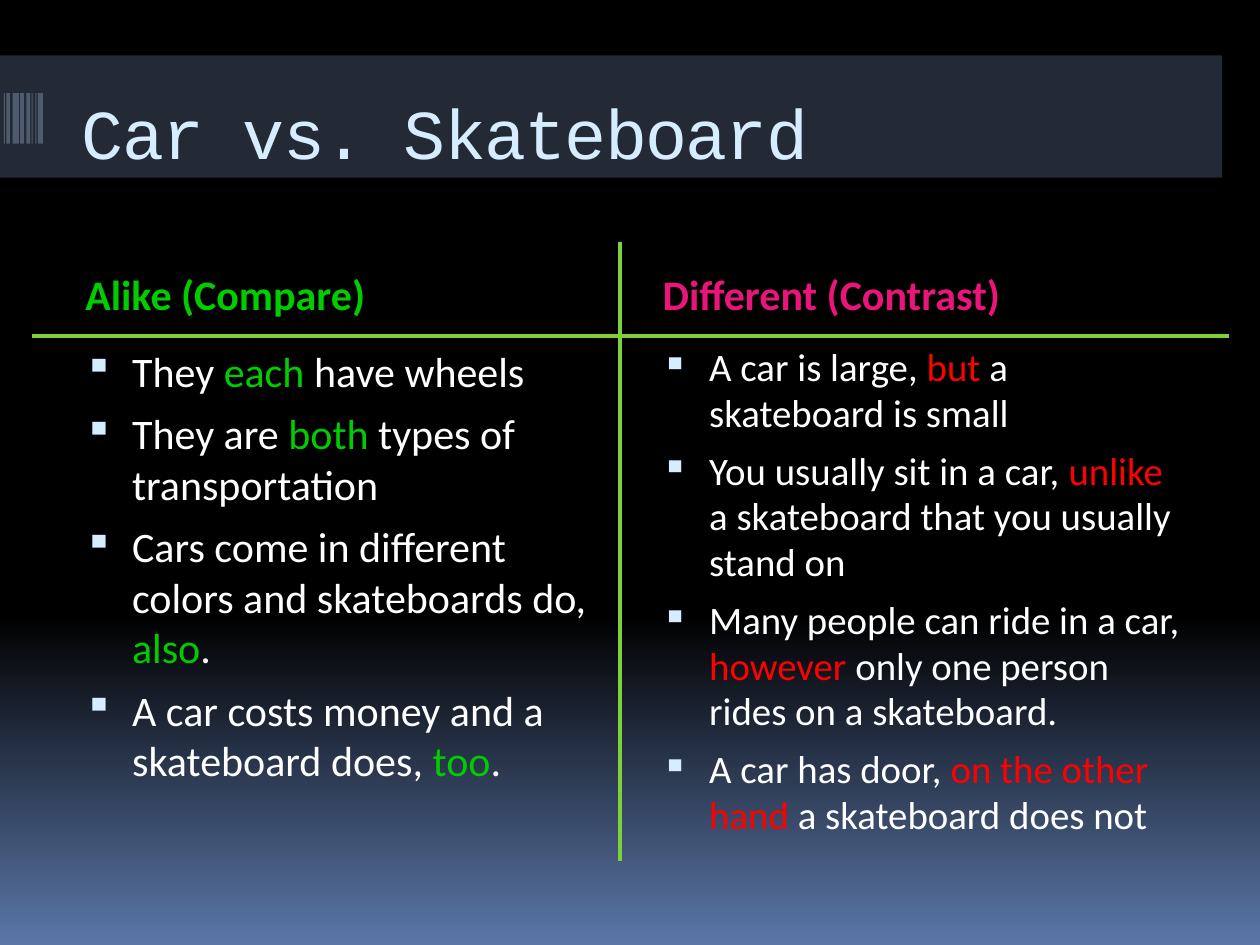
import pptx
import pptx.dml.color
import pptx.enum.dml
import pptx.enum.shapes
import pptx.enum.text
import pptx.oxml.ns
import pptx.util
from lxml import etree
from pptx.dml.color import RGBColor
from pptx.util import Inches, Pt

BLACK = RGBColor(0x00, 0x00, 0x00)
WHITE = RGBColor(0xFF, 0xFF, 0xFF)
SKY = RGBColor(0x5B, 0x77, 0xA8)
BAND = RGBColor(0x58, 0x6A, 0x86)
BAR = RGBColor(0x4E, 0x5B, 0x6F)
ICE = RGBColor(0xD6, 0xEC, 0xFF)
GREEN = RGBColor(0x00, 0xCC, 0x00)
PINK = RGBColor(0xEA, 0x15, 0x7A)
RED = RGBColor(0xFF, 0x00, 0x00)
LIME = RGBColor(0x7F, 0xD1, 0x3B)

BARS = [(0.03, 0.01), (0.05, 0.03), (0.1, 0.05), (0.16, 0.03),
        (0.21, 0.03), (0.25, 0.01), (0.28, 0.01), (0.3, 0.04)]
ALIKE = [
    ("They ", "each ", "have wheels"),
    ("They are ", "both", " types of transportation"),
    ("Cars come in different colors and skateboards do, ", "also", "."),
    ("A car costs money and a skateboard does, ", "too", "."),
]
DIFFERENT = [
    ("A car is large, ", "but", " a skateboard is small"),
    ("You usually sit in a car, ", "unlike", " a skateboard that you usually stand on"),
    ("Many people can ride in a car, ", "however", " only one person rides on a skateboard."),
    ("A car has door,", " on the other hand ", "a skateboard does not"),
]
COLUMNS = [
    (0.5, "Alike (Compare)", GREEN, ALIKE, GREEN, 24, 1.0),
    (5.08, "Different (Contrast)", PINK, DIFFERENT, RED, 22.2, 0.98),
]


def sub(parent, tag, **attrs):
    """Append a DrawingML child element with the given attributes."""
    return etree.SubElement(parent, pptx.oxml.ns.qn(tag), **attrs)


def set_background(s):
    """Fill the slide with a gradient from black down to blue."""
    fill = s.background.fill
    fill.gradient()
    fill.gradient_angle = 270
    for stop, position, color in zip(fill.gradient_stops, (0.65, 1), (BLACK, SKY)):
        stop.position = position
        stop.color.rgb = color


def add_rect(s, x, y, w, h, color, alpha=None):
    """Add a plain rectangle, optionally with an opacity in percent."""
    sp = s.shapes.add_shape(pptx.enum.shapes.MSO_SHAPE.RECTANGLE,
                            Inches(x), Inches(y), Inches(w), Inches(h))
    sp.shadow.inherit = False
    sp.fill.solid()
    sp.fill.fore_color.rgb = color
    sp.line.fill.background()
    if alpha is not None:
        clr = sp.element.spPr.find(".//" + pptx.oxml.ns.qn("a:srgbClr"))
        sub(clr, "a:alpha", val=str(alpha * 1000))


def add_rule(s, x1, y1, x2, y2):
    """Add a straight dividing line."""
    c = s.shapes.add_connector(pptx.enum.shapes.MSO_CONNECTOR.STRAIGHT,
                               Inches(x1), Inches(y1), Inches(x2), Inches(y2))
    c.line.color.rgb = LIME
    c.line.width = Pt(2.25)
    sub(c.element.spPr, "a:effectLst")


def style_run(r, font, size, color, bold=False):
    """Set the font of a run."""
    r.font.name = font
    r.font.size = Pt(size)
    r.font.color.rgb = color
    r.font.bold = bold


def set_title(s, text):
    """Place and format the title in front of its band."""
    title = s.shapes.title
    title.left, title.top = Inches(0.55), Inches(0.56)
    title.width, title.height = Inches(8.5), Inches(1)
    tf = title.text_frame
    tf.text = text
    tf.margin_top = Inches(0.15)
    tf.vertical_anchor = pptx.enum.text.MSO_ANCHOR.TOP
    p = tf.paragraphs[0]
    p.alignment = pptx.enum.text.PP_ALIGN.LEFT
    r = p.runs[0]
    style_run(r, "Courier New", 40, ICE)
    r.font._element.set("spc", "-100")
    title.element.getparent().append(title.element)


def add_text(s, x, y, h):
    """Add a wrapping column text box and return its text frame."""
    tf = s.shapes.add_textbox(Inches(x), Inches(y), Inches(4.42), Inches(h)).text_frame
    tf.word_wrap = True
    return tf


def add_heading(s, x, text, color):
    """Add a bold column heading."""
    tf = add_text(s, x, 1.98, 0.7)
    tf.vertical_anchor = pptx.enum.text.MSO_ANCHOR.MIDDLE
    tf.text = text
    p = tf.paragraphs[0]
    p._p.get_or_add_pPr().set("marL", str(Inches(0.08)))
    style_run(p.runs[0], "Calibri", 24, color, True)


def set_bullet(p):
    """Give a paragraph a hanging square bullet."""
    pPr = p._p.get_or_add_pPr()
    pPr.set("marL", str(Inches(0.45)))
    pPr.set("indent", str(Inches(-0.38)))
    sub(sub(pPr, "a:buClr"), "a:srgbClr", val=str(ICE))
    sub(pPr, "a:buSzPct", val="95000")
    sub(pPr, "a:buChar", char="▪")


def add_bullets(s, x, items, accent, size, spacing):
    """Add a bullet list whose middle runs carry the accent colour."""
    tf = add_text(s, x, 2.69, 4.33)
    for i, parts in enumerate(items):
        p = tf.add_paragraph() if i else tf.paragraphs[0]
        p.line_spacing = spacing
        p.space_before = Pt(7 if i else 0)
        set_bullet(p)
        for text, color in zip(parts, (WHITE, accent, WHITE)):
            r = p.add_run()
            r.text = text
            style_run(r, "Calibri", size, color)


def main():
    """Build the comparison slide and save it."""
    prs = pptx.Presentation()
    prs.slide_width, prs.slide_height = Inches(10), Inches(7.5)
    s = prs.slides.add_slide(prs.slide_layouts[5])
    set_background(s)
    add_rect(s, 0, 0.44, 9.7, 0.97, BAND, 40)
    for x, w in BARS:
        add_rect(s, x, 0.74, w, 0.4, BAR)
    set_title(s, "Car vs. Skateboard")
    for x, heading, color, items, accent, size, spacing in COLUMNS:
        add_heading(s, x, heading, color)
        add_bullets(s, x, items, accent, size, spacing)
    add_rule(s, 9.75, 2.67, 0.25, 2.67)
    add_rule(s, 4.92, 1.92, 4.92, 6.83)
    prs.save("out.pptx")


if __name__ == "__main__":
    main()
